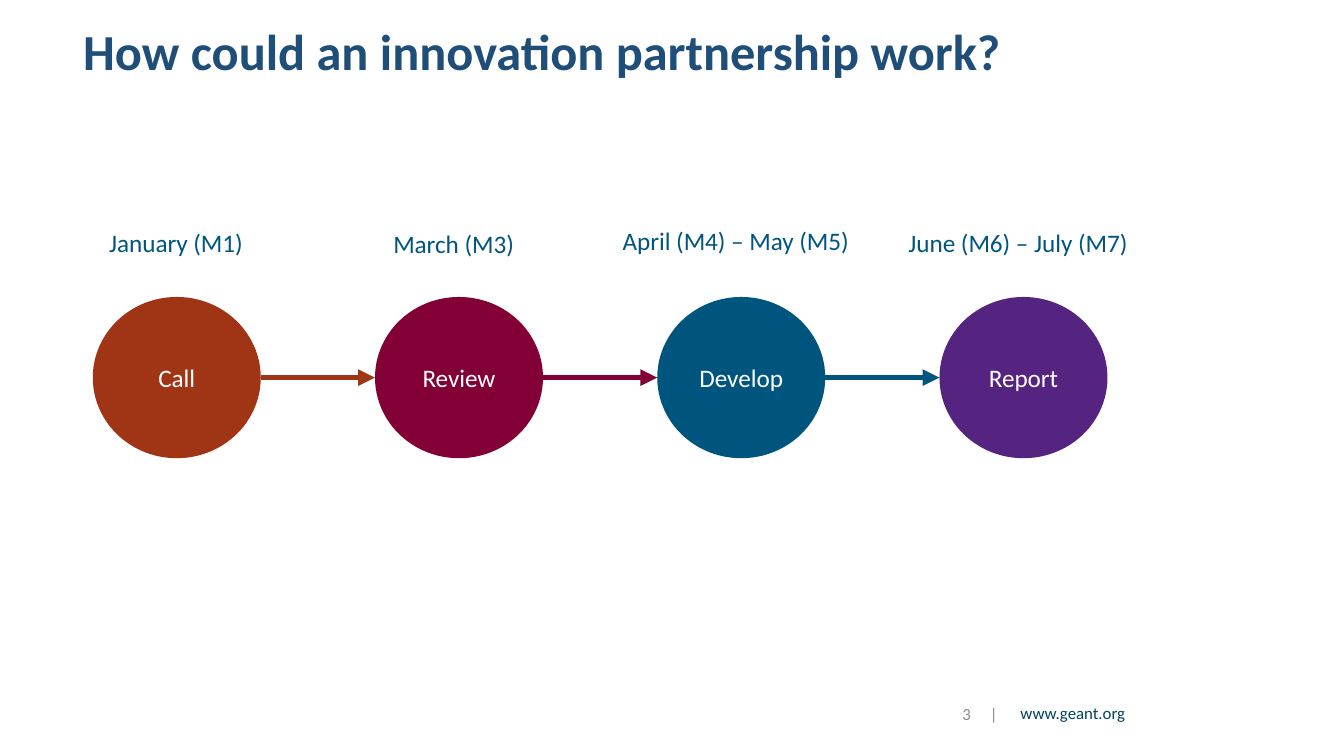
from pptx import Presentation
from pptx.dml.color import RGBColor
from pptx.enum.shapes import MSO_CONNECTOR, MSO_SHAPE
from pptx.enum.text import MSO_ANCHOR, PP_ALIGN
from pptx.oxml.ns import qn
from pptx.util import Inches, Pt
from lxml.etree import SubElement

RUST = RGBColor(0x9F, 0x35, 0x15)
BURGUNDY = RGBColor(0x82, 0x00, 0x36)
BLUE = RGBColor(0x00, 0x55, 0x7F)
PURPLE = RGBColor(0x55, 0x24, 0x81)
TITLE_BLUE = RGBColor(0x1F, 0x4E, 0x79)
FOOTER_BLUE = RGBColor(0x03, 0x43, 0x5F)
GREY = RGBColor(0x8C, 0x8C, 0x8C)
WHITE = RGBColor(0xFF, 0xFF, 0xFF)


def write(shape, text, size, color, align, anchor=MSO_ANCHOR.TOP, wrap=True):
    frame = shape.text_frame
    frame.word_wrap = wrap
    frame.vertical_anchor = anchor
    paragraph = frame.paragraphs[0]
    paragraph.text = text
    paragraph.alignment = align
    paragraph.font.name = "Calibri"
    paragraph.font.size = Pt(size)
    paragraph.font.color.rgb = color
    return paragraph


def add_text(left, top, width, height, *style, **options):
    box = slide.shapes.add_textbox(Inches(left), Inches(top), Inches(width), Inches(height))
    return write(box, *style, **options)


presentation = Presentation()
presentation.slide_width = Inches(10)
presentation.slide_height = Inches(5.625)  # 16:9
slide = presentation.slides.add_slide(presentation.slide_layouts[6])

# Title
title = add_text(0.52, 0.23, 8.12, 0.35, "How could an innovation partnership work?",
                 27, TITLE_BLUE, PP_ALIGN.LEFT, anchor=MSO_ANCHOR.MIDDLE)
title.line_spacing = 0.9
title.font.bold = True

# Footer: web address, then slide number with a widened gap before the bar
add_text(7.21, 5.18, 1.26, 0.27, "www.geant.org", 9, FOOTER_BLUE, PP_ALIGN.RIGHT)
number = add_text(6.97, 5.18, 0.55, 0.27, "3", 9, GREY, PP_ALIGN.RIGHT,
                  anchor=MSO_ANCHOR.MIDDLE)
gap = number.add_run()
gap.text = " "
gap.font._element.set("spc", "810")
number.add_run().text = "|"

# Timeline: step, colour, date, and the left, top and width of the date
steps = [
    ("Call", RUST, "January (M1)", 0.69, 1.64, 1.24),
    ("Review", BURGUNDY, "March (M3)", 2.79, 1.65, 1.17),
    ("Develop", BLUE, "April (M4) – May (M5)", 4.51, 1.63, 1.93),
    ("Report", PURPLE, "June (M6) – July (M7)", 6.61, 1.64, 1.93),
]
FIRST_LEFT, PITCH = 0.69, 2.1
CIRCLE_TOP, CIRCLE_WIDTH, CIRCLE_HEIGHT = 2.21, 1.25, 1.2
MIDDLE = Inches(CIRCLE_TOP + CIRCLE_HEIGHT / 2)

for index, (name, color, date, date_left, date_top, date_width) in enumerate(steps):
    left = FIRST_LEFT + index * PITCH
    circle = slide.shapes.add_shape(MSO_SHAPE.OVAL, Inches(left), Inches(CIRCLE_TOP),
                                    Inches(CIRCLE_WIDTH), Inches(CIRCLE_HEIGHT))
    circle.shadow.inherit = False
    circle.fill.solid()
    circle.fill.fore_color.rgb = color
    circle.line.fill.background()
    write(circle, name, 13.5, WHITE, PP_ALIGN.CENTER, anchor=MSO_ANCHOR.MIDDLE, wrap=False)
    add_text(date_left, date_top, date_width, 0.33, date, 13.5, BLUE, PP_ALIGN.CENTER)

    # Arrow to the next step
    if index < len(steps) - 1:
        arrow = slide.shapes.add_connector(MSO_CONNECTOR.STRAIGHT, Inches(left + CIRCLE_WIDTH),
                                           MIDDLE, Inches(left + PITCH), MIDDLE)
        arrow.line.color.rgb = color
        arrow.line.width = Pt(3)
        properties = arrow._element.spPr
        SubElement(properties.find(qn("a:ln")), qn("a:tailEnd"), type="triangle")
        SubElement(properties, qn("a:effectLst"))

presentation.save("out.pptx")
